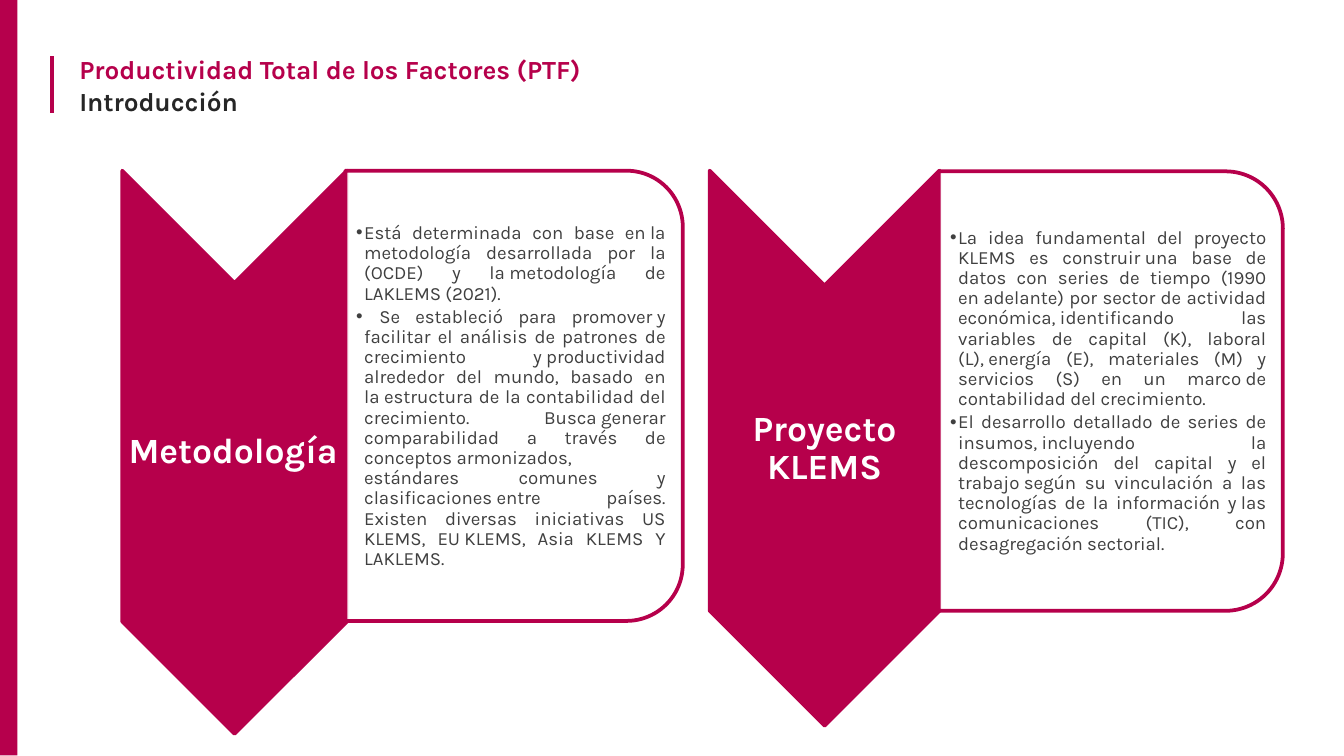
import lxml.etree
import pptx
import pptx.dml.color
import pptx.enum.shapes
import pptx.enum.text
import pptx.oxml.ns
import pptx.util

Inches = pptx.util.Inches
Pt = pptx.util.Pt
RGBColor = pptx.dml.color.RGBColor
SHAPE = pptx.enum.shapes.MSO_SHAPE
ALIGN = pptx.enum.text.PP_ALIGN
MIDDLE = pptx.enum.text.MSO_ANCHOR.MIDDLE
qn = pptx.oxml.ns.qn

BAR_CRIMSON = RGBColor(0xB6, 0x00, 0x4C)
CRIMSON = RGBColor(0xB6, 0x00, 0x4B)
WHITE = RGBColor(0xFF, 0xFF, 0xFF)
BODY_GREY = RGBColor(0x40, 0x40, 0x40)
SUBTITLE_GREY = RGBColor(0x26, 0x26, 0x26)

LABEL_FONT = {"name": "Karla", "size": Pt(19), "bold": True}
BODY_FONT = {"name": "Karla", "size": Pt(10), "bold": False}
TITLE_FONT = {"name": "Karla", "size": Pt(14), "bold": True}
LABEL_PARAGRAPH = {"alignment": ALIGN.CENTER, "line_spacing": 0.9}
BODY_PARAGRAPH = {"alignment": ALIGN.JUSTIFY, "line_spacing": 0.9,
                  "space_after": Pt(1.5), "level": 1}

# A tilde in the wording below stands for a no-break space.
NO_BREAK_SPACE = chr(160)

presentation = pptx.Presentation()
presentation.slide_width = Inches(10)
presentation.slide_height = Inches(10) * 9 // 16
slide = presentation.slides.add_slide(presentation.slide_layouts[6])


def add_block(preset, box, fill, line=None, rotation=0):
    block = slide.shapes.add_shape(preset, *map(Inches, box))
    block.shadow.inherit = False
    block.rotation = rotation
    block.fill.solid()
    block.fill.fore_color.rgb = fill
    if line is None:
        block.line.fill.background()
    else:
        block.line.color.rgb = line
        block.line.width = Pt(2)
    return block


def add_text(box, insets, paragraphs, paragraph_format, font_format, colors,
             indent=None, bullet=None, anchor=None):
    """Write one paragraph per text; indent is (left margin, first line) in inches."""
    frame = slide.shapes.add_textbox(*map(Inches, box)).text_frame
    frame.word_wrap = True
    frame.vertical_anchor = anchor
    for side, inset in zip(("left", "top", "right", "bottom"), insets):
        setattr(frame, f"margin_{side}", Inches(inset))
    for index, (text, color) in enumerate(zip(paragraphs, colors)):
        paragraph = frame.paragraphs[0] if index == 0 else frame.add_paragraph()
        for key, value in paragraph_format.items():
            setattr(paragraph, key, value)
        properties = paragraph._p.get_or_add_pPr()
        if indent:
            properties.set("marL", str(Inches(indent[0])))
            properties.set("indent", str(Inches(indent[1])))
        if bullet:
            lxml.etree.SubElement(properties, qn("a:buFont")).set("typeface", "Arial")
            lxml.etree.SubElement(properties, qn("a:buChar")).set("char", bullet)
        run = paragraph.add_run()
        run.text = text.replace("~", NO_BREAK_SPACE)
        for key, value in font_format.items():
            setattr(run.font, key, value)
        run.font.color.rgb = color
    return frame


add_block(SHAPE.RECTANGLE, (0, 0, 0.13, 5.62), BAR_CRIMSON)

# Chevrons and cards are turned a quarter, so their boxes are given before rotation.
panels = [
    {
        "chevron": (-0.35, 2.53, 4.19, 1.67),
        "label": "Metodología",
        "label_box": (0.9, 2.11, 1.67, 2.51),
        "card": (2.15, 1.69, 3.35, 2.51),
        "body_box": (2.57, 1.4, 2.39, 3.1),
        "body": [
            "Está determinada con base en~la metodología desarrollada por la (OCDE) "
            "y la~metodología de LAKLEMS (2021).",
            " Se estableció para promover~y facilitar el análisis de patrones de "
            "crecimiento y~productividad alrededor del mundo, basado en la~estructura "
            "de la contabilidad del crecimiento. Busca~generar comparabilidad a través "
            "de conceptos~armonizados, estándares comunes y clasificaciones~entre "
            "países. Existen diversas iniciativas US KLEMS, EU~KLEMS, Asia KLEMS Y "
            "LAKLEMS.~",
        ],
    },
    {
        "chevron": (4.07, 2.48, 4.13, 1.71),
        "label": "Proyecto KLEMS",
        "label_box": (5.28, 2.13, 1.71, 2.42),
        "card": (6.63, 1.63, 3.27, 2.56),
        "body_box": (6.99, 1.4, 2.44, 3.02),
        "body": [
            "La idea fundamental del proyecto KLEMS es construir~una base de datos con "
            "series de tiempo (1990 en~adelante) por sector de actividad económica,~"
            "identificando las variables de capital (K), laboral (L),~energía (E), "
            "materiales (M) y servicios (S) en un marco~de contabilidad del "
            "crecimiento.~",
            "El desarrollo detallado de series de insumos,~incluyendo la descomposición "
            "del capital y el trabajo~según su vinculación a las tecnologías de la "
            "información y~las comunicaciones (TIC), con desagregación sectorial.",
        ],
    },
]

for panel in panels:
    add_block(SHAPE.CHEVRON, panel["chevron"], CRIMSON, CRIMSON, 90)
    add_text(panel["label_box"], [0.01] * 4, [panel["label"]], LABEL_PARAGRAPH,
             LABEL_FONT, [WHITE], anchor=MIDDLE)
    card = add_block(SHAPE.ROUND_2_SAME_RECTANGLE, panel["card"], WHITE, CRIMSON, 90)
    card_color = card._element.spPr.find(qn("a:solidFill")).find(qn("a:srgbClr"))
    lxml.etree.SubElement(card_color, qn("a:alpha")).set("val", "90000")
    add_text(panel["body_box"], (0.08, 0.01, 0.01, 0.01), panel["body"],
             BODY_PARAGRAPH, BODY_FONT, [BODY_GREY] * 2, (0.06, -0.06), "•", MIDDLE)

heading = add_text((0.51, 0.36, 4.49, 0.55), (0.07, 0.04, 0.07, 0.04),
                   ["Productividad Total de los Factores (PTF)", "Introducción"],
                   {}, TITLE_FONT, [CRIMSON, SUBTITLE_GREY], (0.01, 0))
for paragraph in heading.paragraphs:
    paragraph.runs[0].font._element.set("spc", "-5")

heading_rule = slide.shapes.add_connector(
    pptx.enum.shapes.MSO_CONNECTOR.STRAIGHT,
    Inches(0.39), Inches(0.84), Inches(0.39), Inches(0.42))
heading_rule.line.color.rgb = BAR_CRIMSON
heading_rule.line.width = Pt(2.25)
lxml.etree.SubElement(heading_rule._element.spPr, qn("a:effectLst"))

presentation.save("out.pptx")
